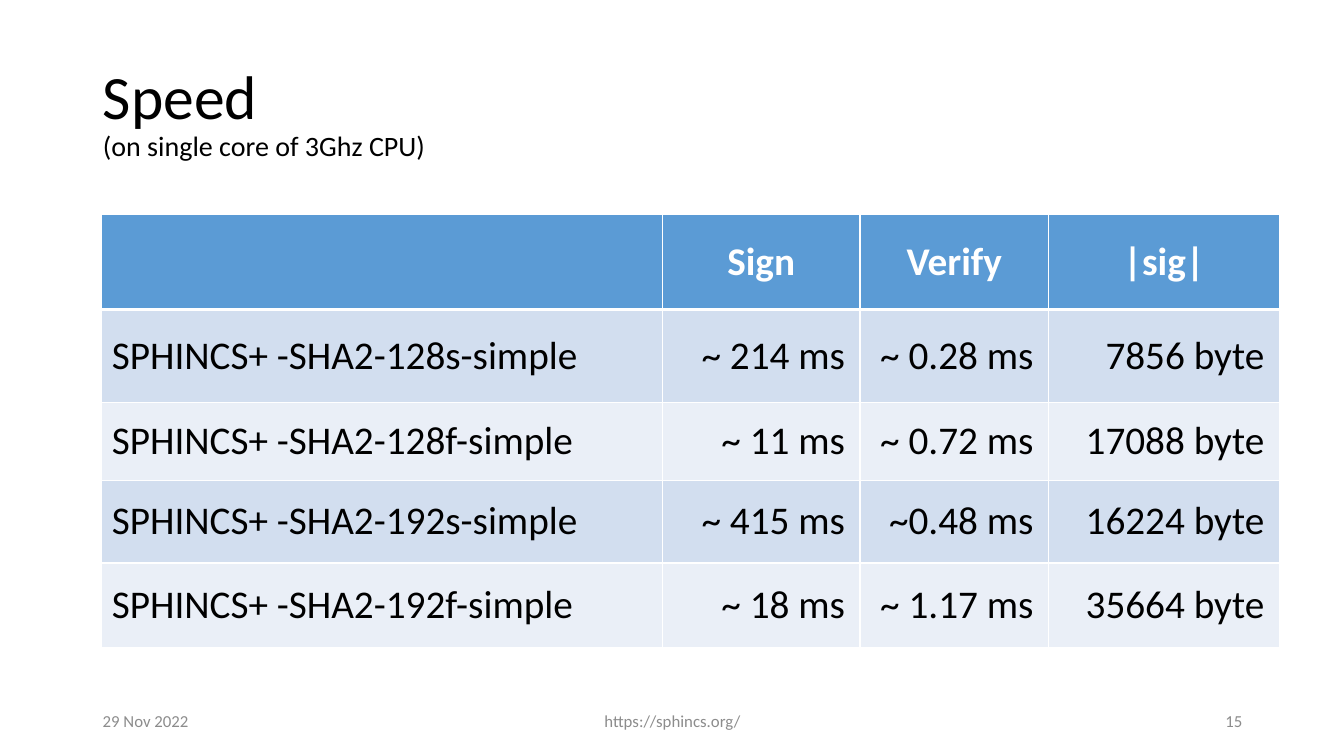
from lxml.etree import SubElement
from pptx import Presentation
from pptx.dml.color import RGBColor
from pptx.enum.text import MSO_ANCHOR, PP_ALIGN
from pptx.oxml.ns import qn
from pptx.util import Inches, Pt

TITLE = [("Speed", 44), ("(on single core of 3Ghz CPU)", 20)]
ROWS = [
    ("", "Sign", "Verify", "|sig|"),
    ("SPHINCS+ -SHA2-128s-simple", "~ 214 ms", "~ 0.28 ms", "7856 byte"),
    ("SPHINCS+ -SHA2-128f-simple", "~ 11 ms", "~ 0.72 ms", "17088 byte"),
    ("SPHINCS+ -SHA2-192s-simple", "~ 415 ms", "~0.48 ms", "16224 byte"),
    ("SPHINCS+ -SHA2-192f-simple", "~ 18 ms", "~ 1.17 ms", "35664 byte"),
]
COL_WIDTHS = [5.56, 1.96, 1.87, 2.29]
ROW_HEIGHTS = [0.94, 0.92, 0.77, 0.82, 0.84]
FOOTERS = [
    ("29 Nov 2022", 0.92, 3, PP_ALIGN.LEFT),
    ("https://sphincs.org/", 4.42, 4.5, PP_ALIGN.CENTER),
    ("15", 9.42, 3, PP_ALIGN.RIGHT),
]
HEADER_FILL, BANDS = "5B9BD5", ("EAEFF7", "D2DEEF")
MARGINS = ("margin_left", "margin_right", "margin_top", "margin_bottom")


def rgb(color):
    return RGBColor.from_string(color)


def set_all(obj, values):
    for name, value in values.items():
        setattr(obj, name, value)


def add_run(p, text, size, color, bold=False):
    r = p.add_run()
    r.text = text
    set_all(r.font, {"name": "Calibri", "size": Pt(size), "bold": bold})
    r.font.color.rgb = rgb(color)


def add_borders(cell, widths):
    tc_pr = cell._tc.get_or_add_tcPr()
    for side, width in widths.items():
        ln = SubElement(tc_pr, qn(f"a:ln{side}"), w=str(Pt(width)))
        fill = SubElement(ln, qn("a:solidFill"))
        SubElement(fill, qn("a:srgbClr"), val="FFFFFF")


def add_title(s):
    sp = s.shapes.title
    set_all(sp, {"left": Inches(0.92), "top": Inches(0.4),
                 "width": Inches(11.95), "height": Inches(1.47)})
    tf = sp.text_frame
    set_all(tf, {"vertical_anchor": MSO_ANCHOR.MIDDLE, "word_wrap": True})
    p = tf.paragraphs[0]
    set_all(p, {"alignment": PP_ALIGN.LEFT, "line_spacing": 0.9})
    for i, (text, size) in enumerate(TITLE):
        if i:
            p.add_line_break()
        add_run(p, text, size, "000000")


def add_speed_table(s):
    table = s.shapes.add_table(
        len(ROWS), len(COL_WIDTHS), Inches(1.01), Inches(2.13),
        Inches(sum(COL_WIDTHS)), Inches(sum(ROW_HEIGHTS))).table
    for col, width in zip(table.columns, COL_WIDTHS):
        col.width = Inches(width)
    for i, (row, height) in enumerate(zip(table.rows, ROW_HEIGHTS)):
        row.height = Inches(height)
        header = i == 0
        for j, (cell, text) in enumerate(zip(row.cells, ROWS[i])):
            add_borders(cell, {"L": 1, "R": 1, "T": 3 if i == 1 else 1,
                               "B": 3 if header else 1})
            cell.fill.solid()
            cell.fill.fore_color.rgb = rgb(HEADER_FILL if header else BANDS[i % 2])
            cell.vertical_anchor = MSO_ANCHOR.MIDDLE
            p = cell.text_frame.paragraphs[0]
            if header:
                p.alignment = PP_ALIGN.CENTER
            elif j:
                p.alignment = PP_ALIGN.RIGHT
                set_all(cell, dict.fromkeys(MARGINS, Inches(0.15)))
            if text:
                add_run(p, text, 28, "FFFFFF" if header else "000000", header)


def add_footers(s):
    for text, left, width, align in FOOTERS:
        sp = s.shapes.add_textbox(Inches(left), Inches(6.95), Inches(width), Inches(0.4))
        tf = sp.text_frame
        set_all(tf, {"word_wrap": True, "vertical_anchor": MSO_ANCHOR.MIDDLE})
        p = tf.paragraphs[0]
        p.alignment = align
        add_run(p, text, 12, "8C8C8C")


def main():
    prs = Presentation()
    set_all(prs, {"slide_width": Inches(13.33), "slide_height": Inches(7.5)})
    s = prs.slides.add_slide(prs.slide_layouts[5])
    add_title(s)
    add_speed_table(s)
    add_footers(s)
    prs.save("out.pptx")


if __name__ == "__main__":
    main()
